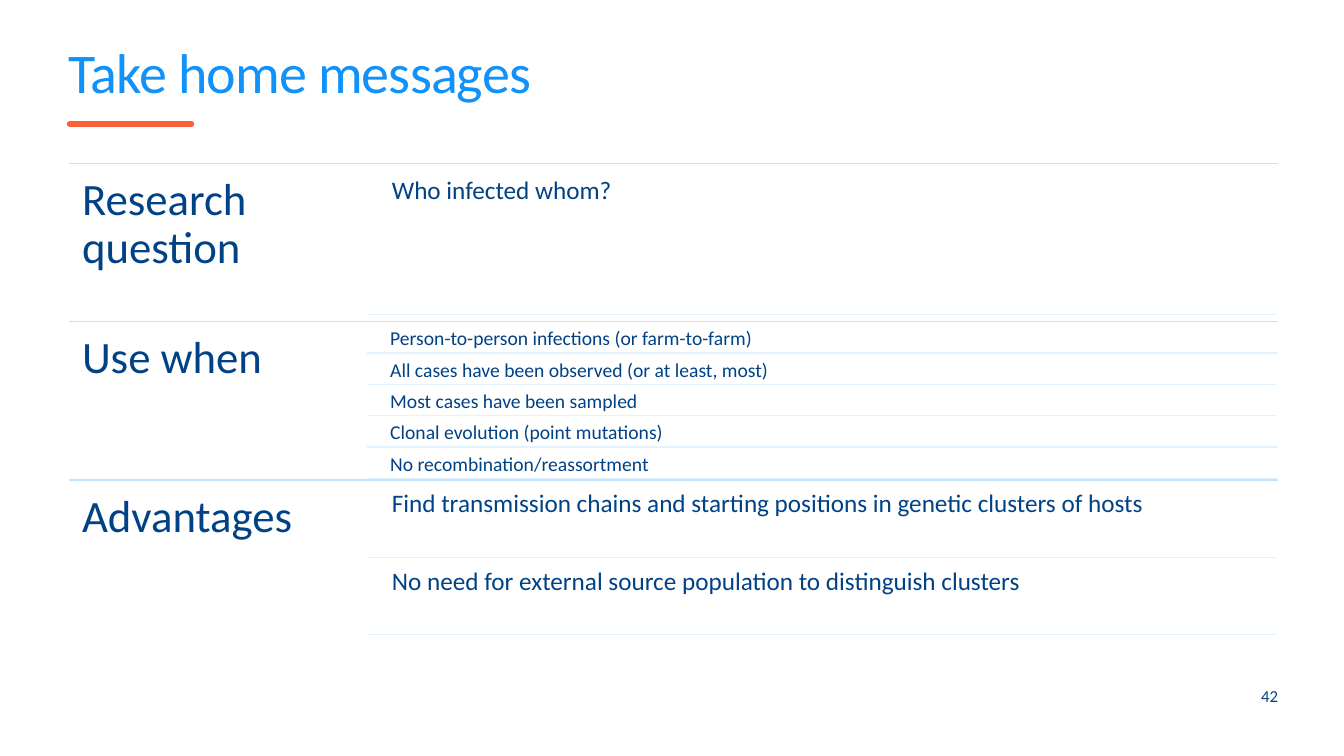
import dataclasses

import lxml.etree
import pptx
import pptx.dml.color
import pptx.enum.shapes
import pptx.enum.text
import pptx.oxml.ns
import pptx.util

Pt = pptx.util.Pt
ALIGN = pptx.enum.text.PP_ALIGN
ANCHOR = pptx.enum.text.MSO_ANCHOR


@dataclasses.dataclass(frozen=True)
class Theme:
    font: str = "Calibri"
    title: str = "1191FA"
    text: str = "004285"
    accent: str = "FC6039"
    row_rule: str = "C2E4FF"
    item_rule: str = "E3F2FF"
    title_size: int = 40
    heading_size: int = 32
    item_size: int = 18
    dense_size: int = 14
    number_size: int = 12


THEME = Theme()

LEFT, RIGHT = 49, 913
ROWS_TOP, ROW_HEIGHT = 116.6, 113.1
HEADING_WIDTH = 213
ITEM_LEFT, ITEM_WIDTH = 274.5, 638
ITEM_RULE_LEFT = LEFT + HEADING_WIDTH
GAP_RATIO = 0.05  # gap between items, relative to item height

ROWS = [
    ("Research question", ["Who infected whom?"]),
    ("Use when", [
        "Person-to-person infections (or farm-to-farm)",
        "All cases have been observed (or at least, most)",
        "Most cases have been sampled",
        "Clonal evolution (point mutations)",
        "No recombination/reassortment",
    ]),
    ("Advantages", [
        "Find transmission chains and starting positions in genetic clusters of hosts",
        "No need for external source population to distinguish clusters",
    ]),
]


def rgb(value):
    return pptx.dml.color.RGBColor.from_string(value)


def fill_text(sp, text, size, color, inset=0, spacing=1.0,
              align=ALIGN.LEFT, anchor=ANCHOR.TOP):
    """Write one formatted run into the shape and return it."""
    tf = sp.text_frame
    tf.word_wrap = True
    tf.auto_size = pptx.enum.text.MSO_AUTO_SIZE.NONE
    tf.vertical_anchor = anchor
    tf.margin_left = tf.margin_right = Pt(inset)
    tf.margin_top = tf.margin_bottom = Pt(inset)
    p = tf.paragraphs[0]
    p.alignment = align
    p.line_spacing = spacing
    r = p.add_run()
    r.text = text
    r.font.name = THEME.font
    r.font.size = Pt(size)
    r.font.color.rgb = rgb(color)
    return r


def add_text(s, left, top, width, height, *args, **kwargs):
    sp = s.shapes.add_textbox(Pt(left), Pt(top), Pt(width), Pt(height))
    fill_text(sp, *args, **kwargs)


def add_rule(s, left, right, y, color, weight=1):
    """Draw a horizontal line and return it."""
    line = s.shapes.add_connector(
        pptx.enum.shapes.MSO_CONNECTOR.STRAIGHT, Pt(left), Pt(y), Pt(right), Pt(y))
    line.line.color.rgb = rgb(color)
    line.line.width = Pt(weight)
    lxml.etree.SubElement(line._element.spPr, pptx.oxml.ns.qn("a:effectLst"))
    return line


def add_title(s, text):
    sp = s.shapes.title
    sp.left, sp.top, sp.width, sp.height = Pt(LEFT), Pt(36), Pt(864), Pt(52)
    r = fill_text(sp, text, THEME.title_size, THEME.title, spacing=0.8)
    r.font._element.set("spc", "-60")
    accent = add_rule(s, 49.7, 136.8, 88.6, THEME.accent, 4)
    accent.line._ln.set("cap", "rnd")


def add_row(s, top, heading, items):
    add_rule(s, LEFT, RIGHT, top, THEME.row_rule)
    add_text(s, LEFT, top, HEADING_WIDTH, ROW_HEIGHT, heading,
             THEME.heading_size, THEME.text, inset=9.6, spacing=0.9)
    n = len(items)
    height = ROW_HEIGHT / (n + (n + 1) * GAP_RATIO)
    gap = height * GAP_RATIO
    size, inset = (THEME.dense_size, 4.2) if n > 2 else (THEME.item_size, 5.4)
    for i, item in enumerate(items):
        y = top + gap + i * (height + gap)
        add_text(s, ITEM_LEFT, y, ITEM_WIDTH, height, item, size, THEME.text,
                 inset=inset, spacing=0.9)
        add_rule(s, ITEM_RULE_LEFT, ITEM_LEFT + ITEM_WIDTH, y + height,
                 THEME.item_rule)


def main():
    prs = pptx.Presentation()
    prs.slide_width, prs.slide_height = Pt(960), Pt(540)
    s = prs.slides.add_slide(prs.slide_layouts.get_by_name("Title Only"))
    add_title(s, "Take home messages")
    add_text(s, 884, 487.5, 29, 19, "42", THEME.number_size, THEME.text,
             align=ALIGN.RIGHT, anchor=ANCHOR.MIDDLE)
    for i, (heading, items) in enumerate(ROWS):
        add_row(s, ROWS_TOP + i * ROW_HEIGHT, heading, items)
    prs.save("out.pptx")


if __name__ == "__main__":
    main()
